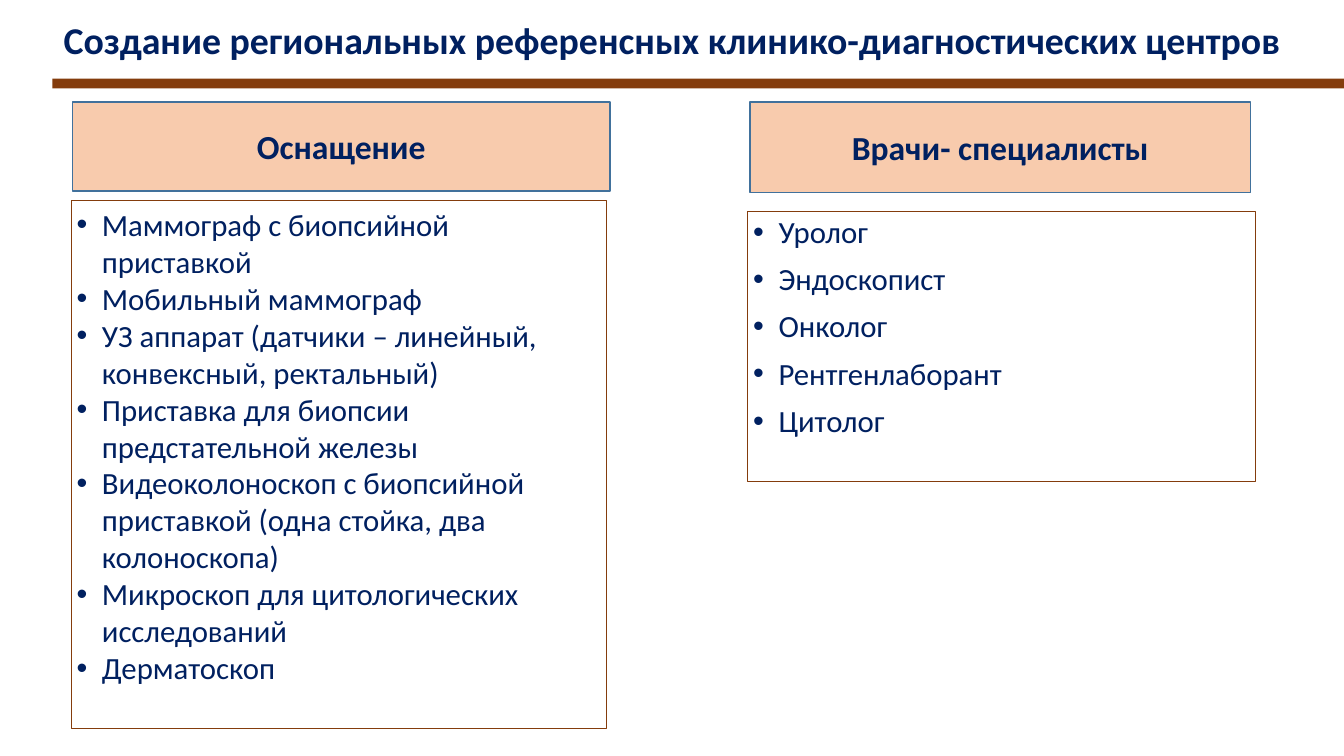
from dataclasses import dataclass

from lxml.etree import SubElement
from pptx import Presentation
from pptx.dml.color import RGBColor
from pptx.enum.shapes import MSO_SHAPE as Shape
from pptx.enum.text import MSO_ANCHOR as Anchor, PP_ALIGN as Align
from pptx.oxml.ns import qn
from pptx.util import Cm, Pt


@dataclass(frozen=True)
class Theme:
    font: str = "Calibri"
    navy: str = "002060"
    peach: str = "F8CBAD"
    blue: str = "41719C"
    brown: str = "843C0C"
    title_size: float = 27
    heading_size: float = 24
    list_size: float = 22
    inset: float = 0.13
    indent: float = 0.64


def write(frame, lines, theme, size, bold=False, align=Align.LEFT,
          anchor=Anchor.TOP, spacing=1.0, before=0, bullet=False):
    """Fill a text frame, one paragraph per line."""
    frame.word_wrap = True
    frame.vertical_anchor = anchor
    frame.margin_left = frame.margin_right = Cm(theme.inset)
    frame.margin_top = frame.margin_bottom = Cm(theme.inset)
    for number, line in enumerate(lines):
        paragraph = frame.add_paragraph() if number else frame.paragraphs[0]
        paragraph.alignment = align
        paragraph.line_spacing = spacing
        paragraph.space_before = Pt(before)
        if bullet:
            props = paragraph._p.get_or_add_pPr()
            props.set("marL", str(Cm(theme.indent)))
            props.set("indent", str(-Cm(theme.indent)))
            SubElement(props, qn("a:buFont"), typeface="Arial")
            SubElement(props, qn("a:buChar"), char="•")
        run = paragraph.add_run()
        run.text = line
        run.font.name = theme.font
        run.font.size = Pt(size)
        run.font.bold = bold
        run.font.color.rgb = RGBColor.from_string(theme.navy)


class Composer:
    def __init__(self, slide, theme):
        self.slide = slide
        self.theme = theme

    def box(self, place, fill=None, line=None, weight=1):
        area = self.slide.shapes.add_shape(Shape.RECTANGLE, *map(Cm, place))
        area.shadow.inherit = False
        if fill:
            area.fill.solid()
            area.fill.fore_color.rgb = RGBColor.from_string(fill)
        else:
            area.fill.background()
        if line:
            area.line.color.rgb = RGBColor.from_string(line)
            area.line.width = Pt(weight)
        else:
            area.line.fill.background()
        return area

    def title(self, text, place):
        area = self.slide.shapes.add_textbox(*map(Cm, place))
        write(area.text_frame, [text], self.theme, self.theme.title_size, bold=True,
              align=Align.CENTER, anchor=Anchor.MIDDLE, spacing=0.9)

    def heading(self, text, place):
        area = self.box(place, self.theme.peach, self.theme.blue)
        write(area.text_frame, [text], self.theme, self.theme.heading_size, bold=True,
              align=Align.CENTER, anchor=Anchor.MIDDLE)

    def bullets(self, items, place, **spacing):
        area = self.box(place, line=self.theme.brown, weight=0.75)
        write(area.text_frame, items, self.theme, self.theme.list_size,
              bullet=True, **spacing)


EQUIPMENT = [
    "Маммограф с биопсийной приставкой",
    "Мобильный маммограф",
    "УЗ аппарат (датчики – линейный, конвексный, ректальный)",
    "Приставка для биопсии предстательной железы",
    "Видеоколоноскоп с биопсийной приставкой (одна стойка, два колоноскопа)",
    "Микроскоп для цитологических исследований",
    "Дерматоскоп",
]
SPECIALISTS = ["Уролог", "Эндоскопист", "Онколог", "Рентгенлаборант", "Цитолог"]


def main():
    deck = Presentation()
    deck.slide_width, deck.slide_height = Cm(33.87), Cm(19.05)
    theme = Theme()
    page = Composer(deck.slides.add_slide(deck.slide_layouts[6]), theme)

    # Title and the bar under it
    page.title("Создание региональных референсных клинико-диагностических центров",
               (0, -0.1, 33.87, 2.34))
    page.box((1.32, 1.98, 32.55, 0.25), fill=theme.brown)

    # Equipment column
    page.heading("Оснащение", (1.83, 2.57, 13.54, 2.24))
    page.bullets(EQUIPMENT, (1.8, 5.05, 13.49, 13.31))

    # Specialists column
    page.heading("Врачи- специалисты", (18.9, 2.57, 12.62, 2.29))
    page.bullets(SPECIALISTS, (18.85, 5.33, 12.8, 6.81), spacing=0.9, before=10)

    deck.save("out.pptx")


if __name__ == "__main__":
    main()
